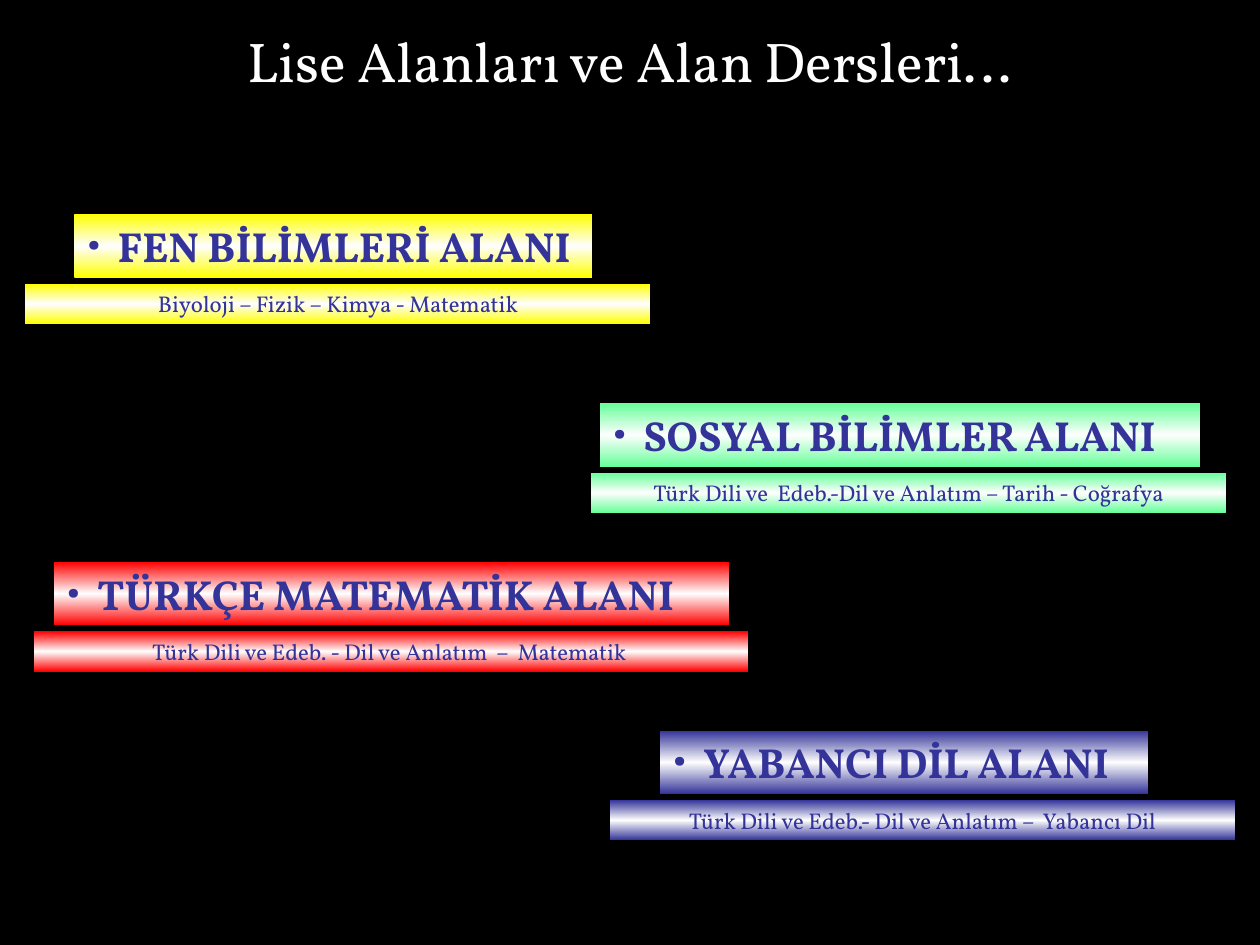
import copy
import pptx
import pptx.dml.color
import pptx.enum.shapes
import pptx.enum.text
import pptx.oxml
import pptx.oxml.ns
import pptx.util

Cm = pptx.util.Cm
Pt = pptx.util.Pt
ALIGN = pptx.enum.text.PP_ALIGN
ANCHOR = pptx.enum.text.MSO_ANCHOR
FONT = "Vollkorn"
INK = "333399"
FIELDS = [
    ("FFFF00", 4.32, (1.5, 10.44), (0.51, 12.6),
     "FEN BİLİMLERİ ALANI", "Biyoloji – Fizik – Kimya - Matematik", None),
    ("66FF99", 8.13, (12.1, 12.09), (11.91, 12.8),
     "SOSYAL BİLİMLER ALANI", "Türk Dili ve  Edeb.-Dil ve Anlatım – Tarih - Coğrafya", None),
    ("FF0000", 11.33, (1.09, 13.61), (0.69, 14.4),
     "TÜRKÇE MATEMATİK ALANI", "Türk Dili ve Edeb. - Dil ve Anlatım  –  Matematik", 2.13),
    ("333399", 14.73, (13.31, 9.83), (12.29, 12.6),
     "YABANCI DİL ALANI", "Türk Dili ve Edeb.- Dil ve Anlatım –  Yabancı Dil", None),
]


def rgb(code):
    return pptx.dml.color.RGBColor.from_string(code)


def write(para, text, size, color, bold=False):
    run = para.add_run()
    run.text = text
    run.font.name = FONT
    run.font.size = Pt(size)
    run.font.bold = bold
    run.font.color.rgb = rgb(color)


def blend(shape, color):
    shape.fill.gradient()
    shape.fill.gradient_angle = 90
    for stop in shape.fill.gradient_stops:
        stop.color.rgb = rgb(color)
    stops = shape._element.spPr.find(".//" + pptx.oxml.ns.qn("a:gsLst"))
    stops.insert(1, copy.deepcopy(stops[0]))
    mid = shape.fill.gradient_stops[1]
    mid.position = 0.5
    mid.color.rgb = rgb("FEFEFE")


def band(slide, left, top, width, height, color):
    kind = pptx.enum.shapes.MSO_SHAPE.RECTANGLE
    shape = slide.shapes.add_shape(kind, Cm(left), Cm(top), Cm(width), Cm(height))
    shape.shadow.inherit = False
    shape.line.fill.background()
    blend(shape, color)
    frame = shape.text_frame
    frame.word_wrap = True
    frame.vertical_anchor = ANCHOR.TOP
    para = frame.paragraphs[0]
    para.alignment = ALIGN.LEFT
    return para


def indent(para, left, hang=0):
    props = para._p.get_or_add_pPr()
    props.set("marL", str(Cm(left)))
    props.set("indent", str(-Cm(hang)))
    return props


def bullet(para, color):
    props = indent(para, 0.62, 0.62)
    space = pptx.oxml.ns.nsdecls("a")
    for tag in (
        f'<a:buClr {space}><a:srgbClr val="{color}"/></a:buClr>',
        f'<a:buFont {space} typeface="{FONT}"/>',
        f'<a:buChar {space} char="•"/>',
    ):
        props.append(pptx.oxml.parse_xml(tag))


def field(slide, color, top, head, bar, name, topics, inset):
    para = band(slide, head[0], top, head[1], 1.28, color)
    bullet(para, INK)
    write(para, name, 24, INK, True)
    para = band(slide, bar[0], top + 1.4, bar[1], 0.81, color)
    if inset is None:
        para.alignment = ALIGN.CENTER
    else:
        indent(para, inset)
    write(para, topics, 13, INK)


def header(slide, left, top, width, height):
    title = slide.shapes.title
    title.left, title.top = Cm(left), Cm(top)
    title.width, title.height = Cm(width), Cm(height)
    title.fill.solid()
    title.fill.fore_color.rgb = rgb("000000")
    title.line.color.rgb = rgb("000000")
    title.line.width = Pt(0.75)
    frame = title.text_frame
    frame.auto_size = pptx.enum.text.MSO_AUTO_SIZE.NONE
    frame.word_wrap = True
    frame.vertical_anchor = ANCHOR.MIDDLE
    frame.margin_top, frame.margin_bottom = Cm(0.3), Cm(0)
    para = frame.paragraphs[0]
    para.alignment = ALIGN.CENTER
    write(para, "Lise Alanları ve Alan Dersleri…", 32, "FFFFFF")


def main():
    deck = pptx.Presentation()
    deck.slide_width, deck.slide_height = Cm(25.4), Cm(19.05)
    slide = deck.slides.add_slide(deck.slide_layouts[5])
    slide.background.fill.solid()
    slide.background.fill.fore_color.rgb = rgb("000000")
    header(slide, 0, 0, 25.4, 2.13)
    for row in FIELDS:
        field(slide, *row)
    deck.save("out.pptx")


if __name__ == "__main__":
    main()
